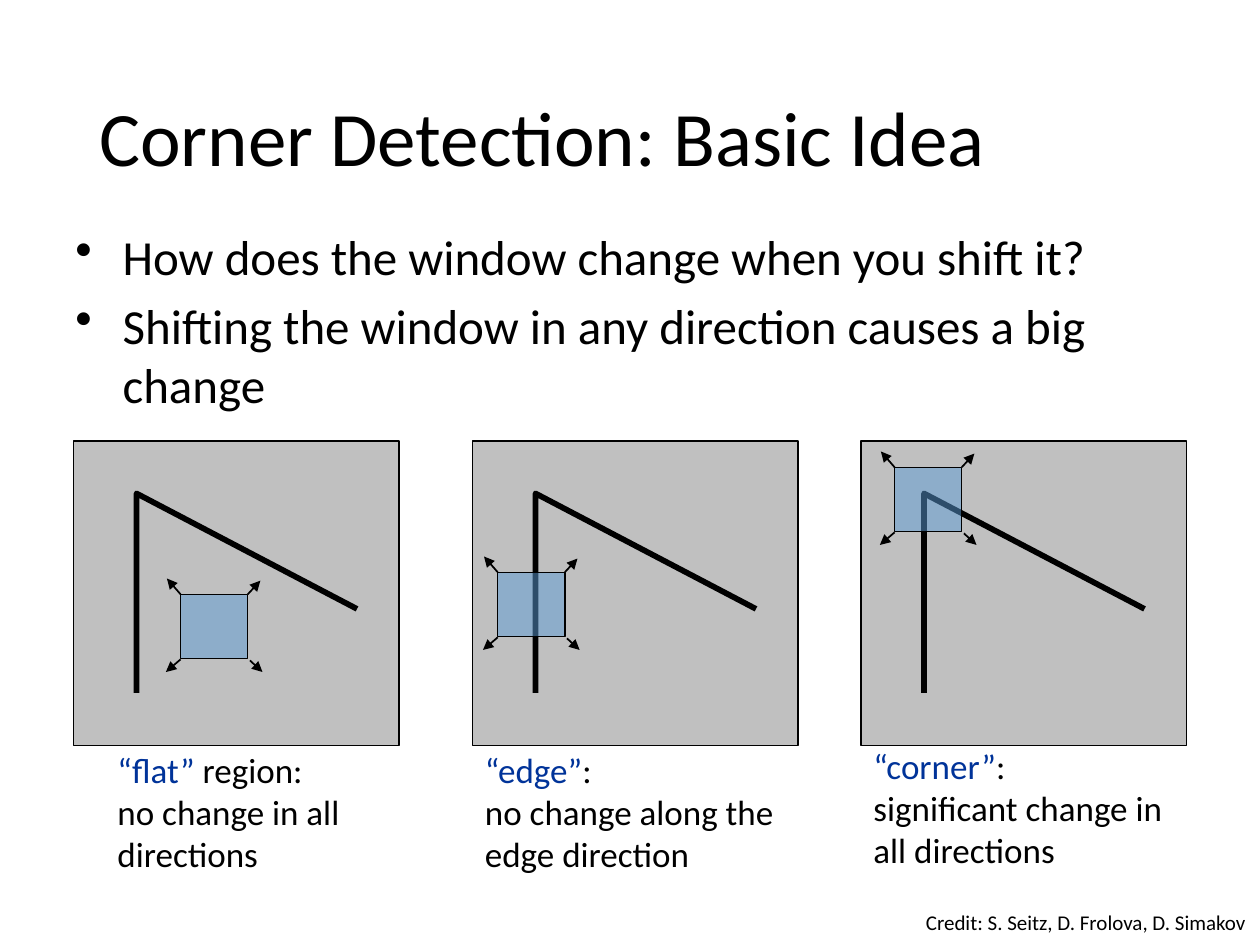
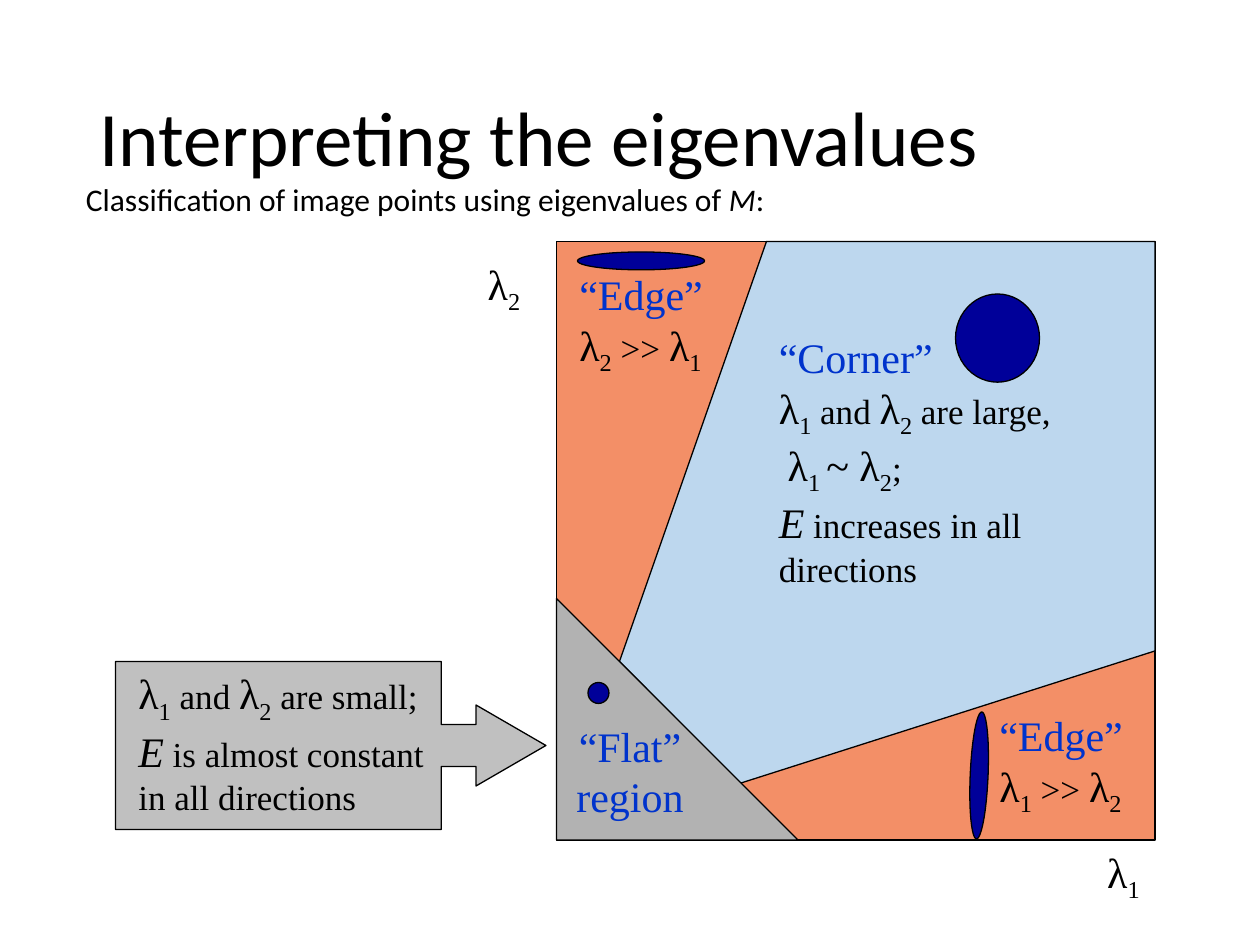
from dataclasses import dataclass

from lxml import etree
from pptx import Presentation, util as u
from pptx.dml.color import RGBColor
from pptx.enum import shapes, text
from pptx.oxml.ns import qn

COLUMNS, ROWS = 120, 90
CELL = u.Inches(10) // COLUMNS
BLACK, SILVER, GRAY = "000000", "C0C0C0", "B2B2B2"
WINDOW_BLUE, SKY, ORANGE, NAVY = "5B9BD5", "BDD7EE", "F38F67", "000099"
CAPTION_BLUE, LABEL_BLUE = "003399", "0033CC"
SANS, SERIF = "Calibri", "Times New Roman"


@dataclass
class Box:
    """A rectangle measured in grid cells."""
    left: float
    top: float
    width: float
    height: float

    def point(self, x, y):
        return round((self.left + x) * CELL), round((self.top + y) * CELL)

    def inner(self, x, y, width, height):
        return Box(self.left + x, self.top + y, width, height)

    def place(self):
        return (*self.point(0, 0), round(self.width * CELL), round(self.height * CELL))


PAGE = Box(0, 0, COLUMNS, ROWS)


def color(value):
    return RGBColor.from_string(value)


def write(frame, paragraphs, size=24, font=SERIF, ink=BLACK, align=text.PP_ALIGN.LEFT,
          bullet=None, gap=0, line_spacing=None):
    """Fill a frame; each paragraph is a list of strings or (string, format) spans."""
    frame.word_wrap = True
    for index, spans in enumerate(paragraphs):
        para = frame.paragraphs[0] if index == 0 else frame.add_paragraph()
        para.alignment = align
        para.space_before = u.Pt(gap if index else 0)
        if line_spacing:
            para.line_spacing = line_spacing
        if bullet:
            props = para._p.get_or_add_pPr()
            props.set("marL", str(u.Inches(0.375)))
            props.set("indent", str(-u.Inches(0.375)))
            etree.SubElement(props, qn("a:buChar")).set("char", bullet)
        for item in spans:
            words, style = (item, {}) if isinstance(item, str) else item
            for number, line in enumerate(words.split("\n")):
                if number:
                    para.add_line_break()
                if line:
                    add_span(para, line, **{"size": size, "font": font, "ink": ink, **style})


def add_span(para, words, size, font, ink, italic=False, subscript=False):
    span = para.add_run()
    span.text = words
    span.font.size = u.Pt(size)
    span.font.name = font
    span.font.italic = italic
    span.font.color.rgb = color(ink)
    if subscript:
        span._r.get_or_add_rPr().set("baseline", "-25000")


def add_text(page, box, *paragraphs, **style):
    write(page.shapes.add_textbox(*box.place()).text_frame, paragraphs, **style)


def finish(shape, fill=None, line=0.75, alpha=None):
    shape.shadow.inherit = False
    if fill:
        shape.fill.solid()
        shape.fill.fore_color.rgb = color(fill)
    else:
        shape.fill.background()
    if alpha:
        tint = shape._element.spPr.find(".//" + qn("a:srgbClr"))
        etree.SubElement(tint, qn("a:alpha")).set("val", str(alpha * 1000))
    shape.line.color.rgb = color(BLACK)
    shape.line.width = u.Pt(line)
    return shape


def add_shape(parent, kind, box, **style):
    return finish(parent.shapes.add_shape(kind, *box.place()), **style)


def add_outline(parent, box, points, close, **style):
    start, *rest = [box.point(*point) for point in points]
    builder = parent.shapes.build_freeform(*start)
    builder.add_line_segments(rest, close=close)
    return finish(builder.convert_to_shape(), **style)


def add_arrow(parent, start, end):
    arrow = parent.shapes.add_connector(shapes.MSO_CONNECTOR.STRAIGHT, *start, *end)
    arrow.line.color.rgb = color(BLACK)
    arrow.line.width = u.Pt(1)
    etree.SubElement(arrow.line._get_or_add_ln(), qn("a:tailEnd")).set("type", "triangle")
    etree.SubElement(arrow._element.spPr, qn("a:effectLst"))


def add_page(deck, title):
    page = deck.slides.add_slide(deck.slide_layouts[5])
    holder = page.shapes.title
    holder.left, holder.top, holder.width, holder.height = Box(8.25, 4.8, 103.5, 17.4).place()
    holder.text_frame.auto_size = text.MSO_AUTO_SIZE.NONE
    holder.text_frame.vertical_anchor = text.MSO_ANCHOR.MIDDLE
    write(holder.text_frame, [[title]], size=44, font=SANS, line_spacing=0.9)
    return page


def draw_panel(page, box, window_x, window_y):
    """A corner of two lines with a sliding window over it."""
    group = page.shapes.add_group_shape()
    rectangle = shapes.MSO_SHAPE.RECTANGLE
    add_shape(group, rectangle, box, fill=SILVER)
    add_outline(group, box, [(6, 24), (6, 5), (27, 16)], close=False, line=3.25)
    window = box.inner(window_x, window_y, 6.4, 6.1)
    add_shape(group, rectangle, window, fill=WINDOW_BLUE, alpha=50)
    right, bottom = window.width, window.height
    for start, end in [
        ((right, 0), (right + 1.2, -1.3)),
        ((right + 0.2, bottom + 0.2), (right + 1.4, bottom + 1.3)),
        ((0, bottom + 0.1), (-1.4, bottom + 1.3)),
        ((0, 0), (-1.3, -1.5)),
    ]:
        add_arrow(group, window.point(*start), window.point(*end))


def build_basic_idea(deck):
    page = add_page(deck, "Corner Detection: Basic Idea")
    panels = [
        (7, (10.2, 14.6), Box(10, 70.7, 27, 13.3),
         "“flat”", " region:\nno change in all directions"),
        (45, (2.4, 12.5), Box(45, 70.7, 32, 13.3),
         "“edge”", ":\nno change along the edge direction"),
        (82, (3.2, 2.5), Box(82, 70.3, 32, 13.3),
         "“corner”", ":\nsignificant change in all directions"),
    ]
    for left, window, caption, name, meaning in panels:
        draw_panel(page, Box(left, 42, 31, 29), *window)
        add_text(page, caption, [(name, {"ink": CAPTION_BLUE}), meaning], size=20, font=SANS)
    add_text(page, Box(6, 21, 108, 20),
             ["How does the window change when you shift it?"],
             ["Shifting the window in any direction causes a big change"],
             size=28, font=SANS, bullet="•", gap=5.6)
    add_text(page, Box(87, 86, 33, 4), ["Credit: S. Seitz, D. Frolova, D. Simakov"],
             size=12, font=SANS)


def eigen(index):
    return ["λ", (str(index), {"subscript": True})]


def small(words):
    return words, {"size": 20}


def heading(words):
    return words, {"ink": LABEL_BLUE}


ENERGY = ("E", {"italic": True})


def draw_regions(page, box):
    """The square of eigenvalue regions with its labels and sample ellipses."""
    kinds = shapes.MSO_SHAPE
    add_shape(page, kinds.RECTANGLE, box, fill=ORANGE)
    add_outline(page, box, [(6, 40), (20, 0), (57, 0), (57, 39), (17.5, 51.6)],
                close=True, fill=SKY)
    add_shape(page, kinds.RIGHT_TRIANGLE, box.inner(0, 34, 23, 23), fill=GRAY)

    add_text(page, box.inner(20, 8, 35, 24.4),
             [heading("“Corner”\n"), *eigen(1), small(" and "), *eigen(2),
              small(" are large,\n "), "λ", ("1 ", {"subscript": True}), "~ ", *eigen(2),
              small(";\n"), ENERGY, small(" increases in all directions")])
    for x, y, larger, lesser in [(41, 44, 1, 2), (1, 2, 2, 1)]:
        add_text(page, box.inner(x, y, 17, 10.8),
                 [heading("“Edge”\n"), *eigen(larger), small(" >> "), *eigen(lesser)])
    add_text(page, box.inner(-1, 45, 16, 10.8), [heading("“Flat” region")],
             align=text.PP_ALIGN.CENTER)

    for x, y, width, height, turn in [
        (38, 5, 8, 8.4, 0), (2, 1, 12.1, 1.7, 0), (3, 42, 2, 2, 0), (34.2, 50, 12.1, 1.7, 92.4),
    ]:
        ellipse = add_shape(page, kinds.OVAL, box.inner(x, y, width, height), fill=NAVY)
        ellipse.rotation = turn


def draw_callout(page, box):
    callout = add_shape(page, shapes.MSO_SHAPE.RIGHT_ARROW_CALLOUT, box, fill=SILVER)
    for index, value in enumerate([0.25, 0.241, 0.416, 0.757]):
        callout.adjustments[index] = value
    add_text(page, box.inner(1, 0, 31, 14.8),
             [*eigen(1), small(" and "), *eigen(2), small(" are small;\n"),
              ENERGY, small(" is almost constant in all directions")])


def build_eigenvalues(deck):
    page = add_page(deck, "Interpreting the eigenvalues")
    draw_callout(page, PAGE.inner(11, 63, 41, 16))
    draw_regions(page, PAGE.inner(53, 23, 57, 57))
    for index, box in [(1, Box(102, 80, 10, 6)), (2, Box(41, 24, 14, 6))]:
        add_text(page, box, eigen(index), align=text.PP_ALIGN.CENTER)
    add_text(page, Box(7, 16.6, 105, 5),
             ["Classification of image points using eigenvalues of ",
              ("M", {"italic": True}), ":"], size=18, font=SANS)


def main():
    deck = Presentation()
    deck.slide_width, deck.slide_height = COLUMNS * CELL, ROWS * CELL
    build_basic_idea(deck)
    build_eigenvalues(deck)
    deck.save("out.pptx")


if __name__ == "__main__":
    main()
